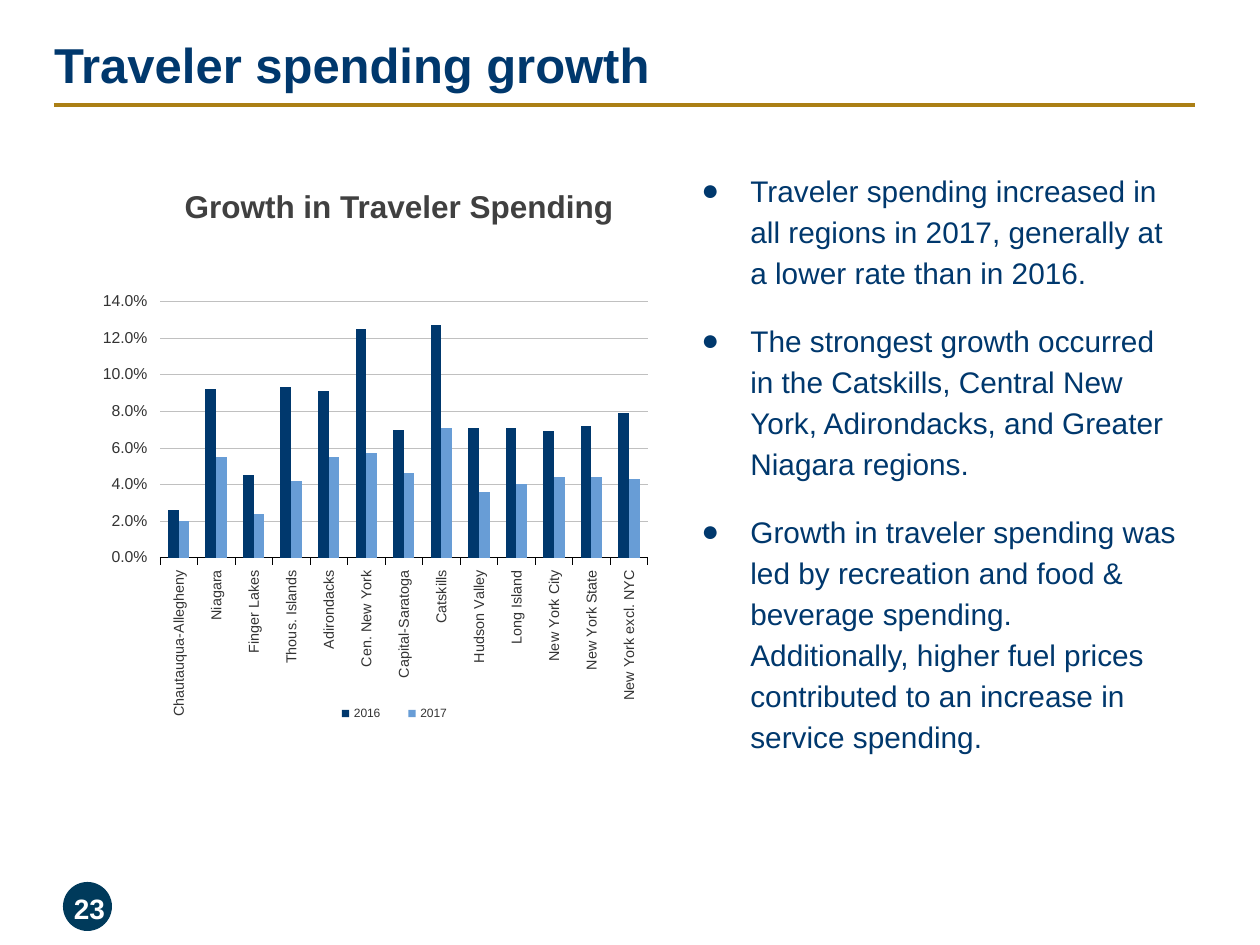
from lxml.etree import SubElement as Sub
from pptx import Presentation
from pptx.chart.data import CategoryChartData as Data
from pptx.dml.color import RGBColor as Rgb
from pptx.enum.chart import XL_CHART_TYPE as Kind, XL_LEGEND_POSITION as Side
from pptx.enum.chart import XL_TICK_LABEL_POSITION as Spot, XL_TICK_MARK as Tick
from pptx.enum.shapes import MSO_CONNECTOR as Link, MSO_SHAPE as Form
from pptx.enum.text import MSO_ANCHOR as Anchor, PP_ALIGN as Align
from pptx.oxml.ns import qn
from pptx.util import Pt

PX = 914400 / 126
HUES = {
    "navy": "00386D", "sky": "689DD6", "gold": "AB7F15", "badge": "003A5B",
    "white": "FFFFFF", "head": "404040", "label": "333333",
    "grid": "C0C0C0", "axis": "000000",
}
GROWTH = [
    ("Chautauqua-Allegheny", 0.026, 0.020),
    ("Niagara", 0.092, 0.055),
    ("Finger Lakes", 0.045, 0.024),
    ("Thous. Islands", 0.093, 0.042),
    ("Adirondacks", 0.091, 0.055),
    ("Cen. New York", 0.125, 0.057),
    ("Capital-Saratoga", 0.070, 0.046),
    ("Catskills", 0.127, 0.071),
    ("Hudson Valley", 0.071, 0.036),
    ("Long Island", 0.071, 0.040),
    ("New York City", 0.069, 0.044),
    ("New York State", 0.072, 0.044),
    ("New York excl. NYC", 0.079, 0.043),
]
POINTS = [
    "Traveler spending increased in all regions in 2017, generally at a lower rate than in 2016.",
    "The strongest growth occurred in the Catskills, Central New York, Adirondacks, and Greater Niagara regions.",
    "Growth in traveler spending was led by recreation and food & beverage spending.  Additionally, higher fuel prices contributed to an increase in service spending.",
]


def emu(*px):
    """Turn px lengths into EMU."""
    return [round(n * PX) for n in px]


def hue(name):
    """Look up a colour."""
    return Rgb.from_string(HUES[name])


def style(font, size, tone, bold=False):
    """Set the face, size and colour of a font."""
    font.name, font.size, font.bold = "Arial", Pt(size), bold
    font.color.rgb = hue(tone)


def stroke(line, tone, width):
    """Set the colour and width of a line."""
    line.color.rgb, line.width = hue(tone), Pt(width)


def label(slide, box, text, size, tone, align=Align.CENTER, inset=True):
    """Place one bold line of text and return its paragraph."""
    frame = slide.shapes.add_textbox(*emu(*box)).text_frame
    frame.word_wrap, frame.vertical_anchor = True, Anchor.MIDDLE
    if not inset:
        frame.margin_left = frame.margin_right = 0
        frame.margin_top = frame.margin_bottom = 0
    frame.text = text
    para = frame.paragraphs[0]
    para.alignment = align
    style(para.runs[0].font, size, tone, True)
    return para


def header(slide, box):
    """Place the slide title above its gold rule."""
    x, y, w, h = box
    label(slide, (x, y, w, 64), "Traveler spending growth", 28, "navy", Align.LEFT, False)
    rule = slide.shapes.add_connector(Link.STRAIGHT, *emu(x, y + h, x + w, y + h))
    stroke(rule.line, "gold", 2)
    Sub(rule._element.spPr, qn("a:effectLst"))


def badge(slide, box):
    """Place the page number on its disc."""
    x, y, w, h = box
    disc = slide.shapes.add_shape(Form.OVAL, *emu(x, y, w, h))
    disc.shadow.inherit = False
    disc.fill.solid()
    disc.fill.fore_color.rgb = hue("badge")
    disc.line.fill.background()
    label(slide, (x - 10, y, w + 24, h + 3), "23", 16, "white")


def bullets(slide, box):
    """Place the bulleted findings."""
    frame = slide.shapes.add_textbox(*emu(*box)).text_frame
    frame.word_wrap = True
    frame.text = "\n".join(POINTS)
    dent, = emu(49)
    for i, para in enumerate(frame.paragraphs):
        para.line_spacing = 1.15
        para.space_before, para.space_after = Pt(12 if i else 0), Pt(3.4)
        props = para._p.get_or_add_pPr()
        props.set("marL", str(dent))
        props.set("indent", str(-dent))
        Sub(props, qn("a:buFont")).set("typeface", "Arial")
        Sub(props, qn("a:buChar")).set("char", "●")
        style(para.runs[0].font, 17, "navy")


def layout(node, at, x, y, w, h, inner=False):
    """Fix the place of a chart part as shares of the chart."""
    for old in node.findall(qn("c:layout")):
        node.remove(old)
    root = node.makeelement(qn("c:layout"))
    node.insert(at, root)
    rules = Sub(root, qn("c:manualLayout"))
    pairs = [("layoutTarget", "inner")] if inner else []
    pairs += [("xMode", "edge"), ("yMode", "edge"), ("x", x), ("y", y), ("w", w), ("h", h)]
    for tag, val in pairs:
        Sub(rules, qn("c:" + tag)).set("val", str(val))


def axes(chart):
    """Format both axes of the chart."""
    cat, val = chart.category_axis, chart.value_axis
    cat.tick_label_position = Spot.LOW
    cat.major_tick_mark = val.major_tick_mark = Tick.OUTSIDE
    style(cat.tick_labels.font, 8.2, "label")
    style(val.tick_labels.font, 9, "label")
    turn = cat._element.xpath("c:txPr/a:bodyPr")[0]
    turn.set("rot", "-5400000")
    turn.set("vert", "horz")
    stroke(cat.format.line, "axis", 0.25)
    val.format.line.fill.background()
    val.minimum_scale, val.maximum_scale, val.major_unit = 0, 0.14, 0.02
    val.tick_labels.number_format = "0.0%"
    val.tick_labels.number_format_is_linked = False
    stroke(val.major_gridlines.format.line, "grid", 0.25)


def graph(slide, box):
    """Place the growth chart under its heading."""
    x, y, w, h = box
    head = label(slide, (x - 49, y, 788, 43), "Growth in Traveler Spending", 18, "head")
    head.line_spacing = 0.8
    names, *rates = zip(*GROWTH)
    data = Data(number_format="0.0%")
    data.categories = names
    for year, vals in zip(("2016", "2017"), rates):
        data.add_series(year, vals)
    spot = emu(x, y + 43, w, h - 43)
    chart = slide.shapes.add_chart(Kind.COLUMN_CLUSTERED, *spot, data).chart
    chart.has_title = False
    style(chart.font, 8.2, "label")
    plot = chart.plots[0]
    plot.gap_width, plot.overlap, plot.vary_by_categories = 150, 0, False
    for series, tone in zip(plot.series, ("navy", "sky")):
        series.format.fill.solid()
        series.format.fill.fore_color.rgb = hue(tone)
    axes(chart)
    chart.has_legend = True
    key = chart.legend
    key.position, key.include_in_layout = Side.BOTTOM, False
    style(key.font, 6.9, "label")
    layout(key._element, 1, 0.39, 0.87, 0.23, 0.05)
    area = chart._chartSpace.chart.plotArea
    layout(area, 0, 0.157, 0.131, 0.724, 0.475, True)


def main():
    """Build the slide and save it."""
    deck = Presentation()
    deck.slide_width, deck.slide_height = emu(1260, 945)
    slide = deck.slides.add_slide(deck.slide_layouts[6])
    header(slide, (54, 32, 1141, 73))
    badge(slide, (63, 882, 49, 49))
    bullets(slide, (689, 161, 507, 580))
    graph(slide, (54, 188, 674, 582))
    deck.save("out.pptx")


if __name__ == "__main__":
    main()
